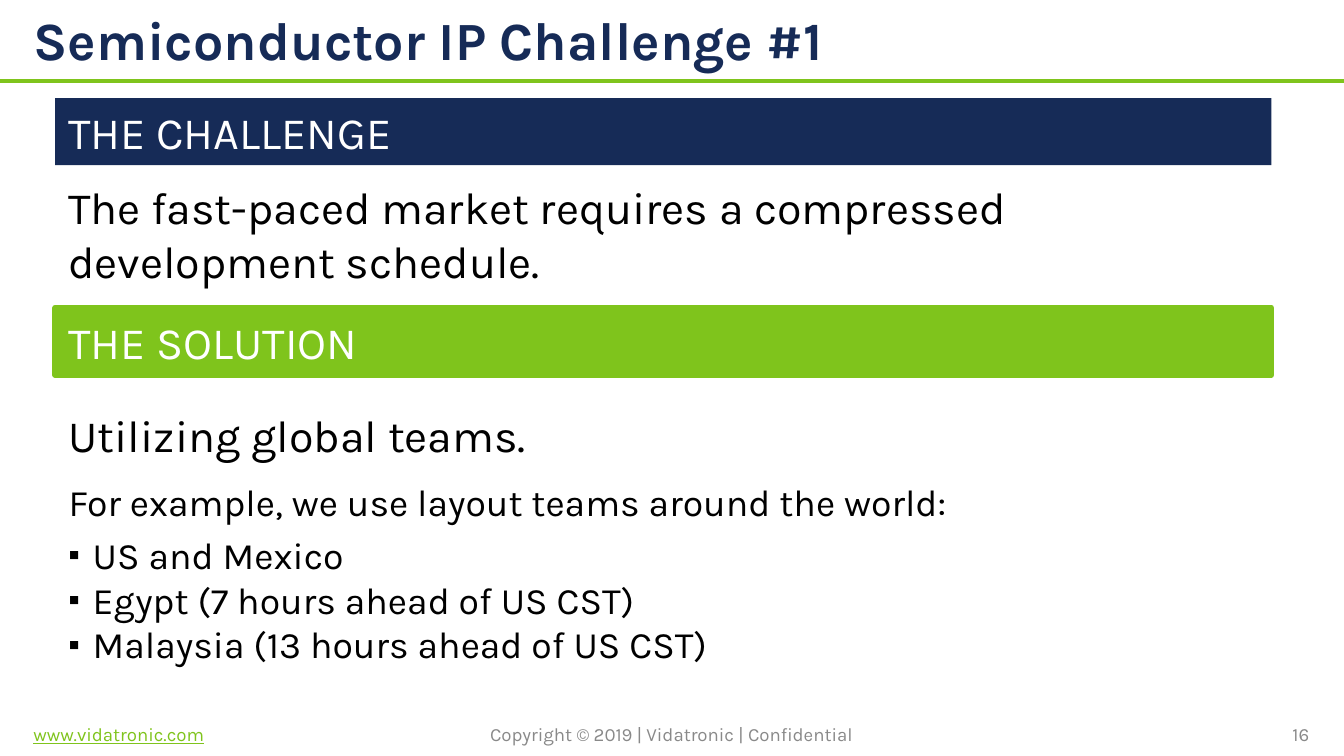
from lxml.etree import SubElement
from pptx import Presentation
from pptx.dml.color import RGBColor
from pptx.enum.shapes import MSO_CONNECTOR, MSO_SHAPE
from pptx.enum.text import MSO_ANCHOR, MSO_AUTO_SIZE, PP_ALIGN
from pptx.oxml.ns import qn
from pptx.util import Inches, Pt

FONT = "Karla"
NAVY, GREEN, GRAY, BLACK, WHITE = "162B57", "7FC41C", "898989", "000000", "FFFFFF"


def color(value):
    return RGBColor.from_string(value)


def place(shape, box):
    shape.left, shape.top, shape.width, shape.height = map(Inches, box)


def prepare_frame(shape, anchor=MSO_ANCHOR.TOP):
    frame = shape.text_frame
    frame.word_wrap = True
    frame.auto_size = MSO_AUTO_SIZE.NONE
    frame.vertical_anchor = anchor
    return frame


def add_run(paragraph, text, size, hex_color, bold=False, underline=False):
    run = paragraph.add_run()
    run.text = text
    font = run.font
    font.name, font.size, font.bold, font.underline = FONT, Pt(size), bold, underline
    font.color.rgb = color(hex_color)


def set_bullet(paragraph, character=None, indent=0):
    """Give the paragraph a hanging bullet, or none without a character."""
    properties = paragraph._p.get_or_add_pPr()
    properties.set("marL", str(Inches(indent)))
    properties.set("indent", str(-Inches(indent)))
    if character:
        SubElement(properties, qn("a:buSzPct"), val="75000")
        SubElement(properties, qn("a:buFont"), typeface=FONT)
        SubElement(properties, qn("a:buChar"), char=character)
    else:
        SubElement(properties, qn("a:buNone"))


def set_spacing(paragraph, before, after):
    paragraph.space_before, paragraph.space_after = Pt(before), Pt(after)


def add_text(slide, box, text, size, hex_color, anchor=MSO_ANCHOR.TOP,
             align=PP_ALIGN.LEFT, underline=False):
    text_box = slide.shapes.add_textbox(*map(Inches, box))
    paragraph = prepare_frame(text_box, anchor).paragraphs[0]
    paragraph.alignment = align
    add_run(paragraph, text, size, hex_color, underline=underline)


def add_header(slide, box):
    """Fill the title and rule off the bottom of the box."""
    left, top, width, height = box
    title = slide.shapes.title
    place(title, (left + 0.15, top, width - 0.62, height - 0.02))
    paragraph = prepare_frame(title, MSO_ANCHOR.MIDDLE).paragraphs[0]
    paragraph.alignment = PP_ALIGN.LEFT
    add_run(paragraph, "Semiconductor IP Challenge #1", 28.8, NAVY, bold=True)

    bottom = Inches(top + height)
    rule = slide.shapes.add_connector(
        MSO_CONNECTOR.STRAIGHT, Inches(left), bottom, Inches(left + width), bottom)
    rule.line.color.rgb = color(GREEN)
    rule.line.width = Pt(2.25)
    SubElement(rule._element.spPr, qn("a:effectLst"))


def add_band(slide, box, text, fill, outline=None):
    band = slide.shapes.add_shape(MSO_SHAPE.RECTANGLE, *map(Inches, box))
    band.shadow.inherit = False
    band.fill.solid()
    band.fill.fore_color.rgb = color(fill)
    if outline:
        band.line.color.rgb = color(fill)
        band.line.width = Pt(outline)
    else:
        band.line.fill.background()
    paragraph = prepare_frame(band).paragraphs[0]
    paragraph.alignment = PP_ALIGN.LEFT
    add_run(paragraph, text, 24, WHITE)


def add_challenge(slide, box):
    left, top, width, height = box
    add_band(slide, (left, top, width, 0.5), "THE CHALLENGE", NAVY)
    add_text(slide, (left, top + 0.56, width, height - 0.56),
             "The fast-paced market requires a compressed development schedule.",
             24, BLACK)


def add_solution(slide, box):
    left, top, width, height = box
    add_band(slide, (left, top, width, 0.5), "THE SOLUTION", GREEN, outline=3)
    body = slide.placeholders[1]
    place(body, (left, top + 0.69, width - 0.85, height - 0.69))
    frame = prepare_frame(body)

    lead = frame.paragraphs[0]
    set_bullet(lead)
    set_spacing(lead, 0, 4)
    add_run(lead, "Utilizing global teams.", 24, BLACK)

    example = frame.add_paragraph()
    set_bullet(example)
    set_spacing(example, 6, 4)
    add_run(example, "For example, we use layout teams around the world:", 20, BLACK)

    for team in ("US and Mexico", "Egypt (7 hours ahead of US CST)",
                 "Malaysia (13 hours ahead of US CST)"):
        paragraph = frame.add_paragraph()
        set_bullet(paragraph, "▪", 0.18)
        set_spacing(paragraph, 0, 0)
        add_run(paragraph, team, 20, BLACK)


def add_footer(slide, box):
    """Set website, copyright and page number in three columns."""
    left, top, width, height = box
    column = 3.17
    gap = (width - 3 * column) / 2
    entries = (
        ("www.vidatronic.com", GREEN, PP_ALIGN.LEFT, True),
        ("Copyright © 2019 | Vidatronic | Confidential", GRAY, PP_ALIGN.CENTER, False),
        ("16", GRAY, PP_ALIGN.RIGHT, False),
    )
    for index, (text, hex_color, align, underline) in enumerate(entries):
        add_text(slide, (left + index * (column + gap), top, column, height),
                 text, 10, hex_color, MSO_ANCHOR.MIDDLE, align, underline)


def main():
    presentation = Presentation()
    presentation.slide_width = Inches(10)
    presentation.slide_height = Inches(10 * 9 / 16)
    slide = presentation.slides.add_slide(presentation.slide_layouts[1])
    add_header(slide, (0, 0, 10, 0.6))
    add_challenge(slide, (0.41, 0.73, 9.05, 1.31))
    add_solution(slide, (0.41, 2.29, 9.05, 2.89))
    add_footer(slide, (0.15, 5.36, 9.69, 0.21))
    presentation.save("out.pptx")


if __name__ == "__main__":
    main()
